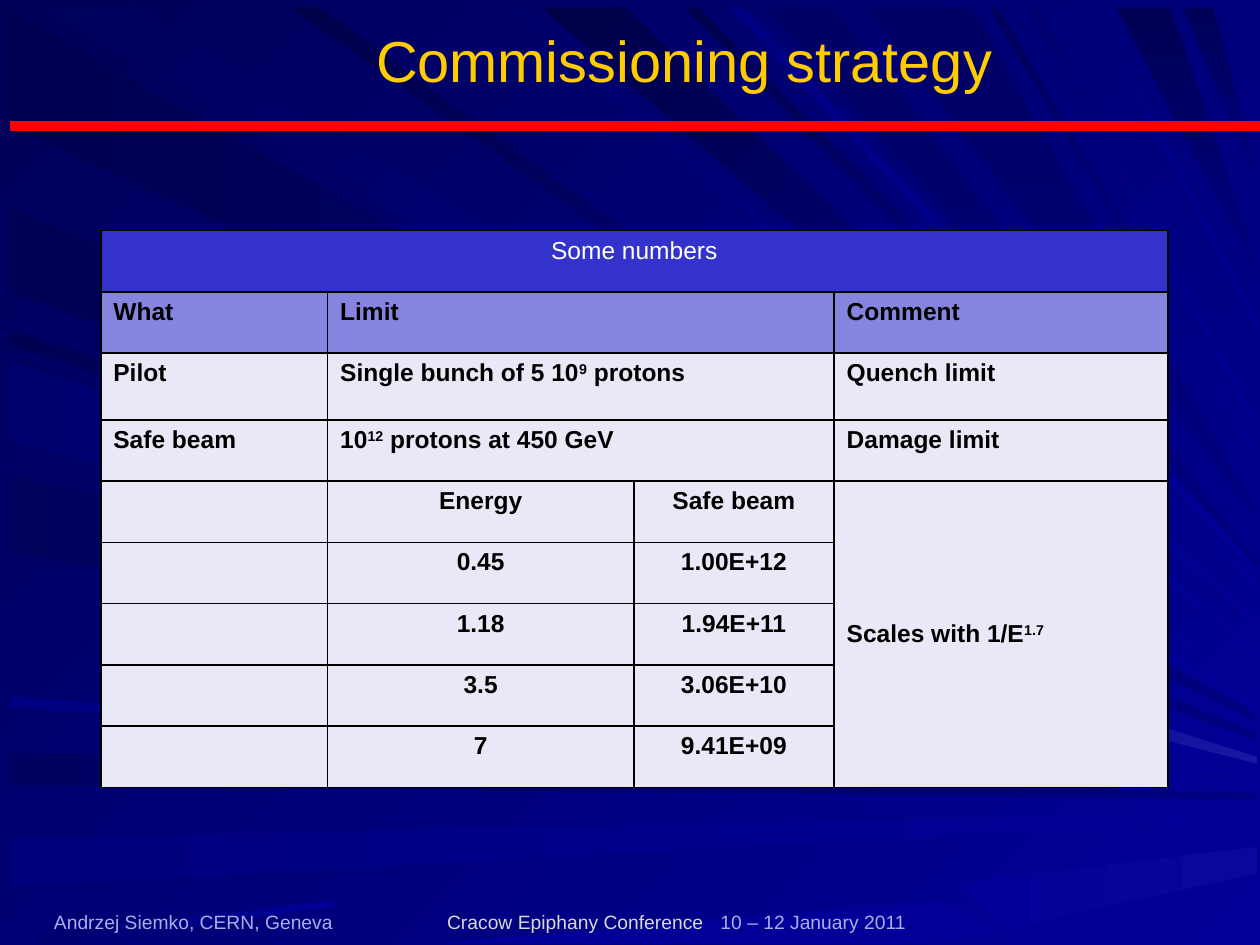
from dataclasses import dataclass

from lxml.etree import SubElement
from pptx import Presentation
from pptx.dml.color import RGBColor
from pptx.enum.shapes import MSO_CONNECTOR
from pptx.enum.text import MSO_ANCHOR as Anchor, MSO_AUTO_SIZE as AutoSize, PP_ALIGN as Align
from pptx.oxml.ns import qn
from pptx.util import Inches, Pt


@dataclass(frozen=True)
class Theme:
    font: str = "Arial"
    title_size: int = 33
    table_size: int = 14
    footer_size: int = 11
    title: str = "FFCC00"
    rule: str = "FF0000"
    white: str = "FFFFFF"
    black: str = "000000"
    footer: str = "ADADEB"
    footer_bright: str = "D9D9D9"
    heading_fill: str = "3333CC"
    column_fill: str = "8585E0"
    body_fill: str = "E8E8F6"
    night: str = "000058"
    navy: str = "000080"
    blue: str = "000099"
    glow: str = "1717A2"


THEME = Theme()
NAVY, BLUE = THEME.navy, THEME.blue

# Rays run from the left or top edge to the right edge, back to front:
# edge, start colour, end colour, start of the wide end, its stop, height at the right
LEFT_EDGE, TOP_EDGE, RIGHT_EDGE = 0.08, 0.06, 9.98
RAY_TIP = 0.04
RAYS = [
    ("left", "000051", NAVY, 0.09, 0.98, 5.7),
    ("top", "00005D", BLUE, 0.34, 1.08, 5.63),
    ("left", "000061", NAVY, 5.97, 6.23, 6.32),
    ("left", "00007D", BLUE, 6.65, 7.04, 6.47),
    ("left", "000053", BLUE, 2.62, 2.74, 5.9),
    ("left", "000055", NAVY, 1.64, 2.32, 5.85),
    ("top", "00006B", BLUE, 4.03, 4.2, 5.2),
    ("top", "000047", BLUE, 4.3, 4.96, 4.95),
    ("top", "00004F", BLUE, 5.43, 5.55, 4.65),
    ("top", "000065", NAVY, 6.08, 6.62, 4.48),
    ("top", "000055", NAVY, 8.86, 9.29, 2.15),
    ("top", "000059", NAVY, 9.39, 9.63, 1.45),
    ("left", "000061", BLUE, 2.82, 3.45, 6),
    ("left", "00005D", BLUE, 3.77, 4.39, 6.05),
    ("left", "000082", BLUE, 5.53, 5.61, 6.23),
    ("top", "00004A", BLUE, 2.31, 2.53, 5.5),
    ("top", "000082", BLUE, 5.79, 5.91, 4.55),
    ("top", "000065", NAVY, 6.87, 7.71, 4.1),
    ("top", "000058", BLUE, 7.85, 7.92, 3.6),
    ("top", "00006F", BLUE, 8.15, 8.25, 3.38),
    ("top", "000079", BLUE, 8.65, 8.72, 2.58),
    ("left", "00006F", BLUE, 2.87, 3.5, 6.03),
]
CORNER = [(RIGHT_EDGE, 6.93), (RIGHT_EDGE, 6.72), (7.57, 7.01), (8.01, 7.37)]
WING = [(6.39, 4.87), (RIGHT_EDGE, 6.01), (RIGHT_EDGE, 6.06), (6.35, 5.13)]

# Footer panels: start colour, corner points, coloured text pieces
FOOTERS = [
    ("00006F", [(0.33, 7.49), (0.52, 7.49), (2.65, 7.19), (2.65, 7.15), (0.33, 7.41)],
     [("Andrzej Siemko, CERN, Geneva", THEME.footer)]),
    (BLUE, [(7.35, 7.49), (7.95, 7.4), (7.49, 7.15), (3.45, 7.49)],
     [("Cracow Epiphany Conference\t", THEME.footer_bright), ("10 – 12 January 2011", THEME.footer)]),
]
DATE_TAB = 2.17

# Table: bars enclose superscripts, None is a cell without text of its own
COLUMNS = [1.8, 2.43, 1.59, 2.65]
TABLE_HEIGHT, PILOT_ROW, PILOT_HEIGHT = 4.42, 2, 0.53
FIRST_ENERGY_ROW = 4
ROWS = [
    ["Some numbers", None, None, None],
    ["What", "Limit", None, "Comment"],
    ["Pilot", "Single bunch of 5 10|9| protons", None, "Quench limit"],
    ["Safe beam", "10|12| protons at 450 GeV", None, "Damage limit"],
    [None, "Energy", "Safe beam", "Scales with 1/E|1.7|"],
    [None, "0.45", "1.00E+12", None],
    [None, "1.18", "1.94E+11", None],
    [None, "3.5", "3.06E+10", None],
    [None, "7", "9.41E+09", None],
]


def set_values(target, values):
    for name, value in values.items():
        setattr(target, name, value)


def add_run(paragraph, text, size, color, bold=False):
    run = paragraph.add_run()
    run.text = text
    set_values(run.font, {"name": THEME.font, "size": Pt(size), "bold": bold})
    run.font.color.rgb = RGBColor.from_string(color)
    return run


def paint(fill, start, end, angle=0):
    if start == end:
        fill.solid()
        fill.fore_color.rgb = RGBColor.from_string(start)
        return
    fill.gradient()
    fill.gradient_angle = (360 - angle) % 360
    for stop, color in zip(fill.gradient_stops, (start, end)):
        stop.color.rgb = RGBColor.from_string(color)


def add_panel(slide, start, end, points, angle=0):
    corners = [(Inches(x), Inches(y)) for x, y in points]
    builder = slide.shapes.build_freeform(*corners[0])
    builder.add_line_segments(corners[1:], close=True)
    shape = builder.convert_to_shape()
    shape.shadow.inherit = False
    shape.line.fill.background()
    paint(shape.fill, start, end, angle)
    return shape


def add_ray(slide, edge, start, end, first, last, height):
    tip = [(RIGHT_EDGE, height + RAY_TIP / 2), (RIGHT_EDGE, height - RAY_TIP / 2)]
    if edge == "left":
        add_panel(slide, start, end, [(LEFT_EDGE, first), (LEFT_EDGE, last), *tip])
    else:
        points = [(last, TOP_EDGE), (first, TOP_EDGE), *tip]
        add_panel(slide, start, end, points, 90 if end == NAVY else 45)


def add_footer(slide, start, points, pieces):
    frame = add_panel(slide, start, BLUE, points).text_frame
    set_values(frame, {"word_wrap": False, "vertical_anchor": Anchor.MIDDLE})
    paragraph = frame.paragraphs[0]
    paragraph.alignment = Align.LEFT
    if len(pieces) > 1:
        tabs = SubElement(paragraph._p.get_or_add_pPr(), qn("a:tabLst"))
        SubElement(tabs, qn("a:tab"), pos=str(Inches(DATE_TAB)), algn="l")
    for text, color in pieces:
        add_run(paragraph, text, THEME.footer_size, color)


def add_rule(slide):
    rule = slide.shapes.add_connector(
        MSO_CONNECTOR.STRAIGHT, Inches(LEFT_EDGE), Inches(1), Inches(10), Inches(1))
    rule.line.color.rgb = RGBColor.from_string(THEME.rule)
    rule.line.width = Pt(6)
    SubElement(rule.element.spPr, qn("a:effectLst"))
    return rule


def set_title(slide, text, shape_below):
    title = slide.shapes.title
    set_values(title, {"left": Inches(1.14), "top": 0, "width": Inches(8.58), "height": Inches(1.03)})
    margins = {f"margin_{side}": 0 for side in ("left", "right", "top", "bottom")}
    set_values(title.text_frame, {
        **margins, "word_wrap": True, "auto_size": AutoSize.NONE, "vertical_anchor": Anchor.MIDDLE})
    paragraph = title.text_frame.paragraphs[0]
    set_values(paragraph, {"alignment": Align.CENTER, "line_spacing": 0.87})
    add_run(paragraph, text, THEME.title_size, THEME.title)
    shape_below.element.addnext(title.element)


def format_cell(cell, row, column, text):
    # Borders come before the fill in the cell properties
    properties = cell._tc.get_or_add_tcPr()
    for side in ("lnL", "lnR", "lnT", "lnB"):
        border = SubElement(properties, qn(f"a:{side}"), w=str(Pt(1)))
        SubElement(SubElement(border, qn("a:solidFill")), qn("a:srgbClr"), val=THEME.black)
    fill = {0: THEME.heading_fill, 1: THEME.column_fill}.get(row, THEME.body_fill)
    paint(cell.fill, fill, fill)
    if text is None:
        return
    paragraph = cell.text_frame.paragraphs[0]
    is_energy = row >= FIRST_ENERGY_ROW and column in (1, 2)
    paragraph.alignment = Align.CENTER if row == 0 or is_energy else Align.LEFT
    if is_energy:
        set_values(cell, {"margin_left": Inches(0.01), "margin_right": Inches(0.01)})
    for index, piece in enumerate(text.split("|")):
        if piece:
            run = add_run(paragraph, piece, THEME.table_size, THEME.black if row else THEME.white, row > 0)
            if index % 2:
                run.font._element.set("baseline", "30000")


def add_numbers_table(slide):
    table = slide.shapes.add_table(
        len(ROWS), len(COLUMNS), Inches(0.8), Inches(1.83), Inches(sum(COLUMNS)), Inches(TABLE_HEIGHT)).table
    set_values(table, {"first_row": False, "horz_banding": False})
    for column, width in zip(table.columns, COLUMNS):
        column.width = Inches(width)
    row_height = Inches((TABLE_HEIGHT - PILOT_HEIGHT) / (len(ROWS) - 1))
    for index, row in enumerate(table.rows):
        row.height = Inches(PILOT_HEIGHT) if index == PILOT_ROW else row_height
    for row, texts in enumerate(ROWS):
        for column, text in enumerate(texts):
            format_cell(table.cell(row, column), row, column, text)
    # Heading, limit and scaling cells span their neighbours
    table.cell(0, 0).merge(table.cell(0, 3))
    for row in range(1, FIRST_ENERGY_ROW):
        table.cell(row, 1).merge(table.cell(row, 2))
    scaling = table.cell(FIRST_ENERGY_ROW, 3)
    scaling.merge(table.cell(len(ROWS) - 1, 3))
    scaling.vertical_anchor = Anchor.MIDDLE


def main():
    presentation = Presentation()
    set_values(presentation, {"slide_width": Inches(10), "slide_height": Inches(7.5)})
    slide = presentation.slides.add_slide(presentation.slide_layouts[5])
    # Background and footer
    paint(slide.background.fill, THEME.night, BLUE, 45)
    for ray in RAYS:
        add_ray(slide, *ray)
    add_panel(slide, BLUE, THEME.glow, WING)
    for footer in FOOTERS:
        add_footer(slide, *footer)
    add_panel(slide, BLUE, "08089C", CORNER)
    # Title and content
    set_title(slide, "Commissioning strategy", add_rule(slide))
    add_numbers_table(slide)
    presentation.save("out.pptx")


if __name__ == "__main__":
    main()
